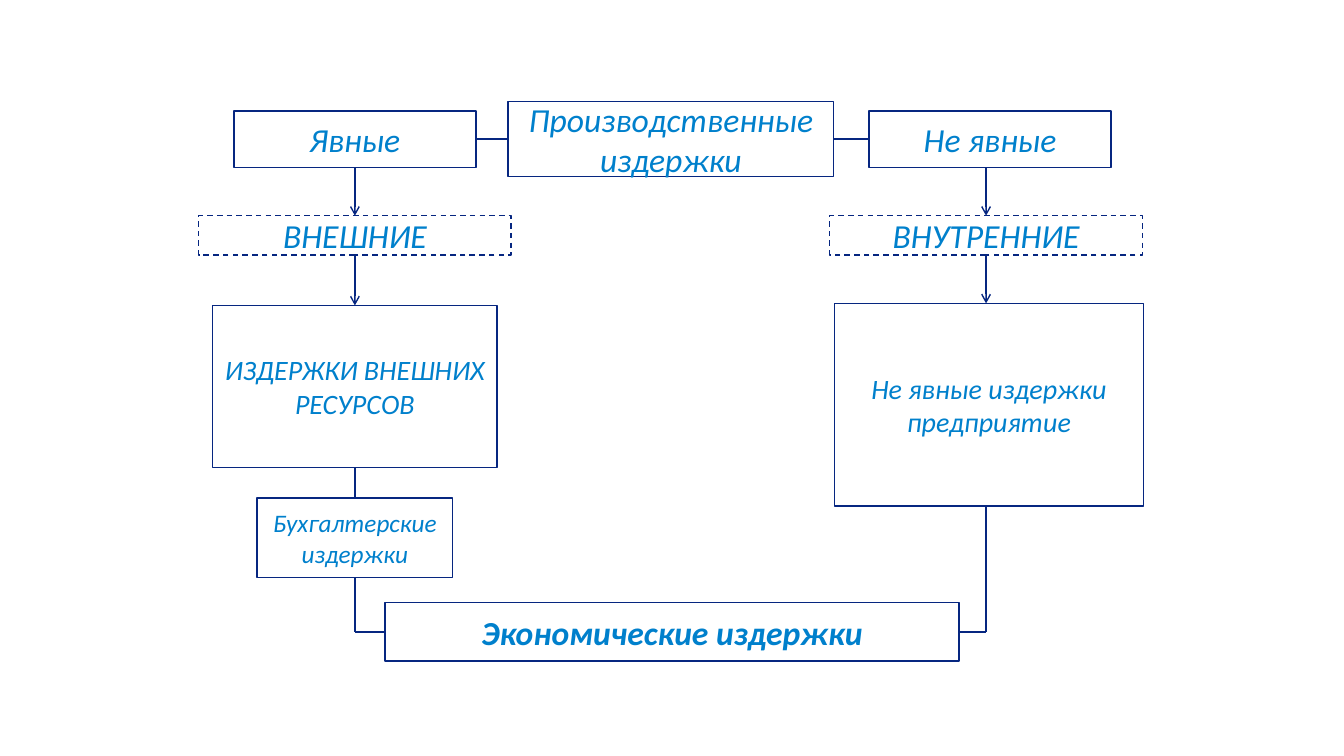
from dataclasses import dataclass

from lxml.etree import SubElement
from pptx import Presentation
from pptx.dml.color import RGBColor
from pptx.enum.dml import MSO_LINE
from pptx.enum.shapes import MSO_CONNECTOR, MSO_SHAPE
from pptx.enum.text import MSO_ANCHOR, PP_ALIGN
from pptx.oxml.ns import qn
from pptx.util import Inches, Pt

TOP, LEFT, BOTTOM, RIGHT = range(4)


@dataclass(frozen=True)
class Theme:
    """Colours, font and type sizes of the cost diagram."""
    outline: RGBColor = RGBColor(0x06, 0x26, 0x80)
    text: RGBColor = RGBColor(0x00, 0x80, 0xCC)
    font: str = "Calibri"
    heading: int = 24
    body: int = 20
    small: int = 18
    line_width: int = 1


class CostDiagram:
    """Draws boxes and links on the current slide in one style."""

    def __init__(self, slide, theme):
        """Keep the slide and its theme."""
        self.slide = slide
        self.theme = theme

    def outline(self, line):
        """Give a line the diagram's colour and width."""
        line.color.rgb = self.theme.outline
        line.width = Pt(self.theme.line_width)

    def box(self, text, left, top, width, height, size, dashed=False, bold=False):
        """Add an outlined rectangle with centred italic text."""
        box = self.slide.shapes.add_shape(
            MSO_SHAPE.RECTANGLE, *map(Inches, (left, top, width, height)))
        box.shadow.inherit = False
        box.fill.background()
        self.outline(box.line)
        if dashed:
            box.line.dash_style = MSO_LINE.DASH
        frame = box.text_frame
        frame.word_wrap = True
        frame.vertical_anchor = MSO_ANCHOR.MIDDLE
        paragraph = frame.paragraphs[0]
        paragraph.alignment = PP_ALIGN.CENTER
        run = paragraph.add_run()
        run.text = text
        run.font.color.rgb = self.theme.text
        formats = {"name": self.theme.font, "size": Pt(size), "italic": True, "bold": bold}
        for name, value in formats.items():
            setattr(run.font, name, value)
        return box

    def link(self, start, end, arrow=False):
        """Join two ends, each a point or a box with its side."""
        points = [(0, 0) if not isinstance(stop[0], (int, float)) else stop
                  for stop in (start, end)]
        link = self.slide.shapes.add_connector(
            MSO_CONNECTOR.STRAIGHT, *(Inches(value) for point in points for value in point))
        for stop, connect in ((start, link.begin_connect), (end, link.end_connect)):
            if not isinstance(stop[0], (int, float)):
                connect(*stop)
        self.outline(link.line)
        if arrow:
            SubElement(link.line._get_or_add_ln(), qn("a:tailEnd"), type="arrow")
        SubElement(link._element.spPr, qn("a:effectLst"))


def main():
    """Build the cost slide and save it."""
    presentation = Presentation()
    presentation.slide_width = Inches(13.33)
    presentation.slide_height = Inches(7.5)
    theme = Theme()
    diagram = CostDiagram(presentation.slides.add_slide(presentation.slide_layouts[6]), theme)

    production = diagram.box("Производственные издержки", 5.04, 1.01, 3.23, 0.74, theme.heading)
    explicit = diagram.box("Явные", 2.32, 1.1, 2.4, 0.56, theme.heading)
    implicit = diagram.box("Не явные", 8.62, 1.1, 2.4, 0.56, theme.heading)
    external = diagram.box("ВНЕШНИЕ", 1.97, 2.14, 3.1, 0.39, theme.heading, dashed=True)
    internal = diagram.box("ВНУТРЕННИЕ", 8.23, 2.14, 3.1, 0.39, theme.heading, dashed=True)
    resources = diagram.box("ИЗДЕРЖКИ ВНЕШНИХ РЕСУРСОВ", 2.11, 3.03, 2.82, 1.61, theme.body)
    accounting = diagram.box("Бухгалтерские издержки", 2.55, 4.94, 1.94, 0.79, theme.small)
    diagram.box("Не явные издержки предприятие", 8.28, 3.01, 3.06, 2.01, theme.body)
    economic = diagram.box("Экономические издержки", 3.82, 5.98, 5.69, 0.58,
                           theme.heading, bold=True)

    left_corner, right_corner = (3.52, 6.27), (9.78, 6.27)
    diagram.link((production, LEFT), (explicit, RIGHT))
    diagram.link((implicit, LEFT), (production, RIGHT))
    diagram.link((explicit, BOTTOM), (external, TOP), arrow=True)
    diagram.link((9.78, 1.66), (internal, TOP), arrow=True)
    diagram.link((external, BOTTOM), (resources, TOP), arrow=True)
    diagram.link((internal, BOTTOM), (9.78, 3.01), arrow=True)
    diagram.link((accounting, TOP), (resources, BOTTOM))
    diagram.link(left_corner, (accounting, BOTTOM))
    diagram.link((economic, LEFT), left_corner)
    diagram.link(right_corner, (9.78, 5.02))
    diagram.link((economic, RIGHT), right_corner)

    presentation.save("out.pptx")


if __name__ == "__main__":
    main()
